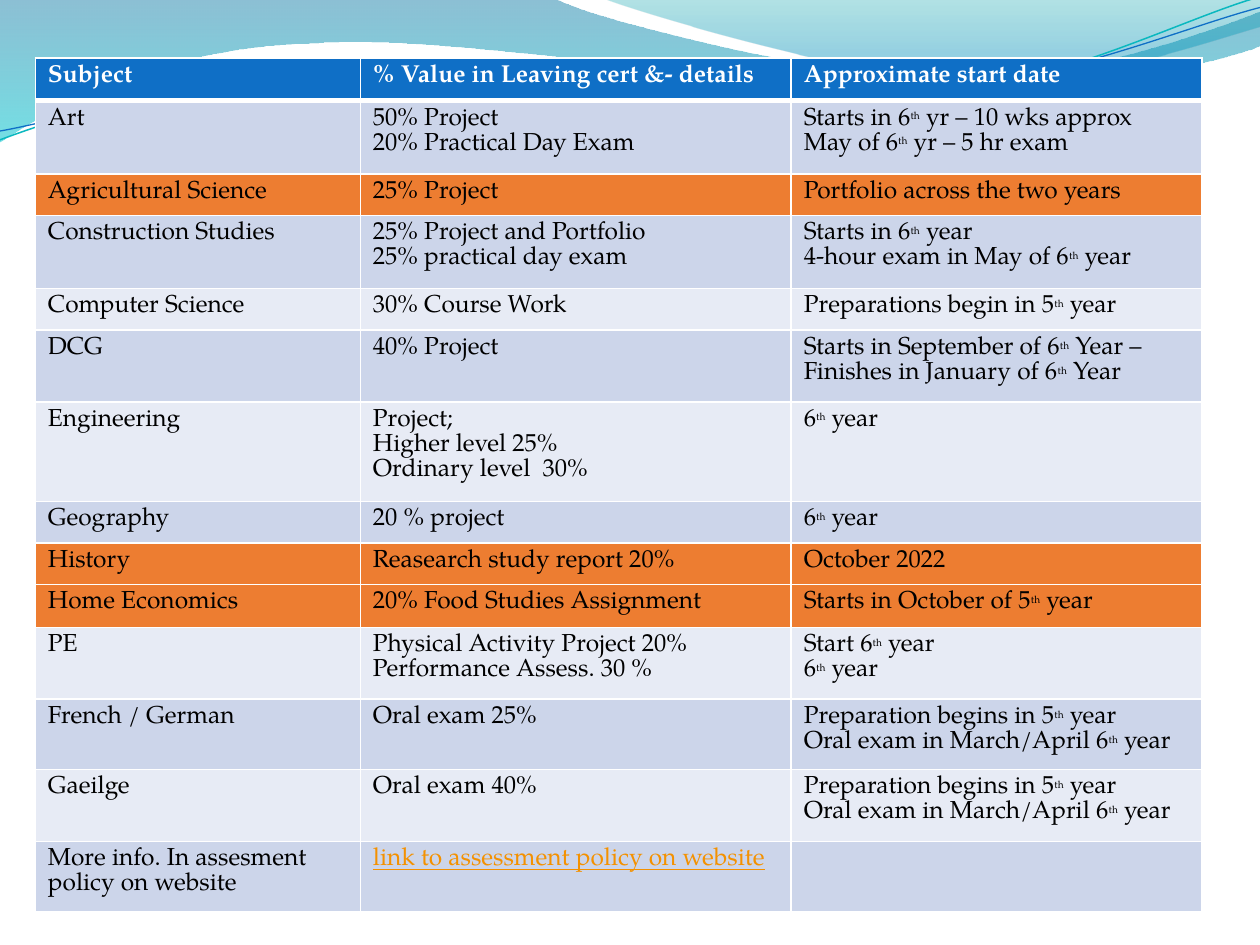
import math
from dataclasses import dataclass

import pptx
import pptx.dml.color
import pptx.oxml
import pptx.oxml.ns
import pptx.util
from pptx.util import Inches


@dataclass(frozen=True)
class Theme:
    font: str = "TeX Gyre Pagella"
    size: float = 14
    ordinal_size: float = 10
    line_pitch: float = 14.3
    text: str = "000000"
    white: str = "FFFFFF"
    header: str = "0F6FC6"
    band: str = "CCD5EA"
    light: str = "E7EBF5"
    accent: str = "ED7D31"
    link: str = "F49100"
    teal: str = "0AB8BF"


@dataclass(frozen=True)
class Wave:
    """Start point, then segments: 2 numbers for a line, 6 for a curve."""
    start: tuple
    segments: tuple
    stops: tuple = ()      # (position, colour, opacity %)
    line: tuple = ()       # (colour, width in points)
    center: tuple = (0, 0)
    rotation: float = 0


@dataclass(frozen=True)
class Row:
    height: float
    fill: str
    cells: tuple


T = Theme()

WAVES = (
    Wave((0, 0), ((4.4, -0.01), (4.76, 0.17, 6.64, 0.63, 7.58, 0.63),
                  (8.53, 0.63, 9.58, 0.26, 10, 0.09), (10.01, 0.36),
                  (9.83, 0.44, 8.7, 0.76, 7.46, 0.75),
                  (6.22, 0.75, 3.82, 0.28, 2.57, 0.34),
                  (1.29, 0.36, 0.46, 0.83, -0.01, 1.13)),
         stops=((0, "0074A1", 45), (1, "00C6CF", 55))),
    Wave((4.79, -0.01), ((5.09, 0.11, 6.82, 0.62, 7.69, 0.65),
                         (8.56, 0.69, 9.61, 0.32, 10, 0.21), (10, 0)),
         stops=((0, "00A1A9", 30), (0.8, "008BBF", 45))),
    Wave((0, 1.11), ((0.48, 0.93, 1.58, 0.57, 2.77, 0.52),
                     (3.95, 0.47, 5.93, 0.89, 7.13, 0.8),
                     (8.33, 0.71, 9.38, 0.15, 9.98, -0.02)),
         line=(T.teal, 0.85), center=(4.99, 0.57), rotation=-2.7),
    Wave((0, 1.04), ((0.47, 0.96, 1.64, 0.61, 2.83, 0.56),
                     (4.03, 0.51, 5.97, 0.84, 7.17, 0.75),
                     (8.36, 0.67, 9.41, 0.21, 10, 0.06)),
         line=(T.header, 0.75), center=(5, 0.59), rotation=-2.7),
)

# "^th" marks a raised ordinal, a line break starts a new paragraph
COLS = (2.58, 3.42, 3.26)
ORAL_DATES = "Preparation begins in 5^th year\nOral exam in March/April 6^th year"
ROWS = (
    Row(0.34, T.header, ("Subject", "% Value in Leaving cert &- details",
                         "Approximate start date")),
    Row(0.58, T.band, ("Art", "50% Project\n20% Practical Day Exam",
                       "Starts in 6^th yr – 10 wks approx\nMay of 6^th yr – 5 hr exam")),
    Row(0.33, T.accent, ("Agricultural Science", "25% Project",
                         "Portfolio across the two years")),
    Row(0.58, T.band, ("Construction Studies",
                       "25% Project and Portfolio\n25% practical day exam",
                       "Starts in 6^th year\n4-hour exam in May of 6^th year")),
    Row(0.33, T.light, ("Computer Science", "30% Course Work",
                        "Preparations begin in 5^th year")),
    Row(0.57, T.band, ("DCG", "40% Project",
                       "Starts in September of 6^th Year – Finishes in January of 6^th Year")),
    Row(0.79, T.light, ("Engineering",
                        "Project;\nHigher level 25%\nOrdinary level  30%", "6^th year")),
    Row(0.33, T.band, ("Geography", "20 % project", "6^th year")),
    Row(0.33, T.accent, ("History", "Reasearch study report 20%", "October 2022")),
    Row(0.34, T.accent, ("Home Economics", "20% Food Studies Assignment",
                         "Starts in October of 5^th year")),
    Row(0.57, T.light, ("PE", "Physical Activity Project 20%\nPerformance Assess. 30 %",
                        "Start 6^th year\n6^th year")),
    Row(0.56, T.band, ("French / German", "Oral exam 25%", ORAL_DATES)),
    Row(0.57, T.light, ("Gaeilge", "Oral exam 40%", ORAL_DATES)),
    Row(0.56, T.band, ("More info. In assesment policy on website",
                       "link to assessment policy on website", "")),
)


def rgb(value: str) -> pptx.dml.color.RGBColor:
    return pptx.dml.color.RGBColor.from_string(value)


def unrotate(point: tuple, wave: Wave) -> tuple:
    """Place of a point before the shape is turned, in EMU."""
    angle = math.radians(-wave.rotation)
    dx, dy = (a - c for a, c in zip(point, wave.center))
    x = wave.center[0] + dx * math.cos(angle) - dy * math.sin(angle)
    y = wave.center[1] + dx * math.sin(angle) + dy * math.cos(angle)
    return Inches(x), Inches(y)


def bend(sp, wave: Wave) -> None:
    """Join each three line points of a curved segment into one Bézier."""
    qn = pptx.oxml.ns.qn
    lines = iter(list(sp._element.spPr.iter(qn("a:lnTo"))))
    for seg in wave.segments:
        first = next(lines)
        if len(seg) == 6:
            curve = pptx.oxml.parse_xml(f'<a:cubicBezTo {pptx.oxml.ns.nsdecls("a")}/>')
            first.addprevious(curve)
            for node in (first, next(lines), next(lines)):
                curve.append(node[0])
                node.getparent().remove(node)


def draw_wave(s, wave: Wave) -> None:
    points = [unrotate(seg[i:i + 2], wave)
              for seg in wave.segments for i in range(0, len(seg), 2)]
    builder = s.shapes.build_freeform(*unrotate(wave.start, wave), scale=1)
    builder.add_line_segments(points, close=bool(wave.stops))
    sp = builder.convert_to_shape()
    bend(sp, wave)
    sp.shadow.inherit = False
    sp.rotation = wave.rotation
    if wave.line:
        sp.fill.background()
        sp.line.color.rgb = rgb(wave.line[0])
        sp.line.width = pptx.util.Pt(wave.line[1])
        return
    sp.line.fill.background()
    sp.fill.gradient()
    sp.fill.gradient_angle = 270
    for stop, (position, color, _) in zip(sp.fill.gradient_stops, wave.stops):
        stop.position = position
        stop.color.rgb = rgb(color)
    # Opacity of the gradient stops
    colors = sp._element.spPr.iter(pptx.oxml.ns.qn("a:srgbClr"))
    for clr, (_, _, opacity) in zip(colors, wave.stops):
        clr.append(pptx.oxml.parse_xml(
            f'<a:alpha {pptx.oxml.ns.nsdecls("a")} val="{opacity * 1000}"/>'))


def write_text(tf, text: str, color: str, **formats) -> None:
    for n, line in enumerate(text.split("\n")):
        p = tf.add_paragraph() if n else tf.paragraphs[0]
        p.line_spacing = pptx.util.Pt(T.line_pitch)
        for k, part in enumerate(line.split("^th")):
            pieces = [("th", T.ordinal_size)] if k else []
            for piece, size in pieces + [(part, T.size)]:
                r = p.add_run()
                r.text = piece
                values = {"name": T.font, "size": pptx.util.Pt(size), **formats}
                for key, value in values.items():
                    setattr(r.font, key, value)
                r.font.color.rgb = rgb(color)
                if size == T.ordinal_size:
                    r.font._element.set("baseline", "30000")


def set_borders(cell, top: float, bottom: float) -> None:
    tc_pr = cell._tc.get_or_add_tcPr()
    widths = {"L": 1, "R": 1, "T": top, "B": bottom}
    for i, (side, width) in enumerate(widths.items()):
        tc_pr.insert(i, pptx.oxml.parse_xml(
            f'<a:ln{side} {pptx.oxml.ns.nsdecls("a")} w="{pptx.util.Pt(width)}">'
            f'<a:solidFill><a:srgbClr val="{T.white}"/></a:solidFill></a:ln{side}>'))


def draw_table(s, left: float, top: float) -> None:
    height = sum(row.height for row in ROWS)
    table = s.shapes.add_table(len(ROWS), len(COLS), Inches(left), Inches(top),
                               Inches(sum(COLS)), Inches(height)).table
    table.horz_banding = False
    for column, width in zip(table.columns, COLS):
        column.width = Inches(width)
    for i, row in enumerate(ROWS):
        table.rows[i].height = Inches(row.height)
        for j, text in enumerate(row.cells):
            cell = table.cell(i, j)
            cell.fill.solid()
            cell.fill.fore_color.rgb = rgb(row.fill)
            set_borders(cell, 3 if i == 1 else 1, 3 if i == 0 else 1)
            is_link = text.startswith("link")
            color = T.white if i == 0 else T.link if is_link else T.text
            if text:
                write_text(cell.text_frame, text, color, bold=i == 0, underline=is_link)


def main() -> None:
    prs = pptx.Presentation()
    prs.slide_width, prs.slide_height = Inches(10), Inches(7.5)
    s = prs.slides.add_slide(prs.slide_layouts[6])
    # Waves across the top
    for wave in WAVES:
        draw_wave(s, wave)
    # Subjects table
    draw_table(s, 0.28, 0.46)
    prs.save("out.pptx")


if __name__ == "__main__":
    main()
